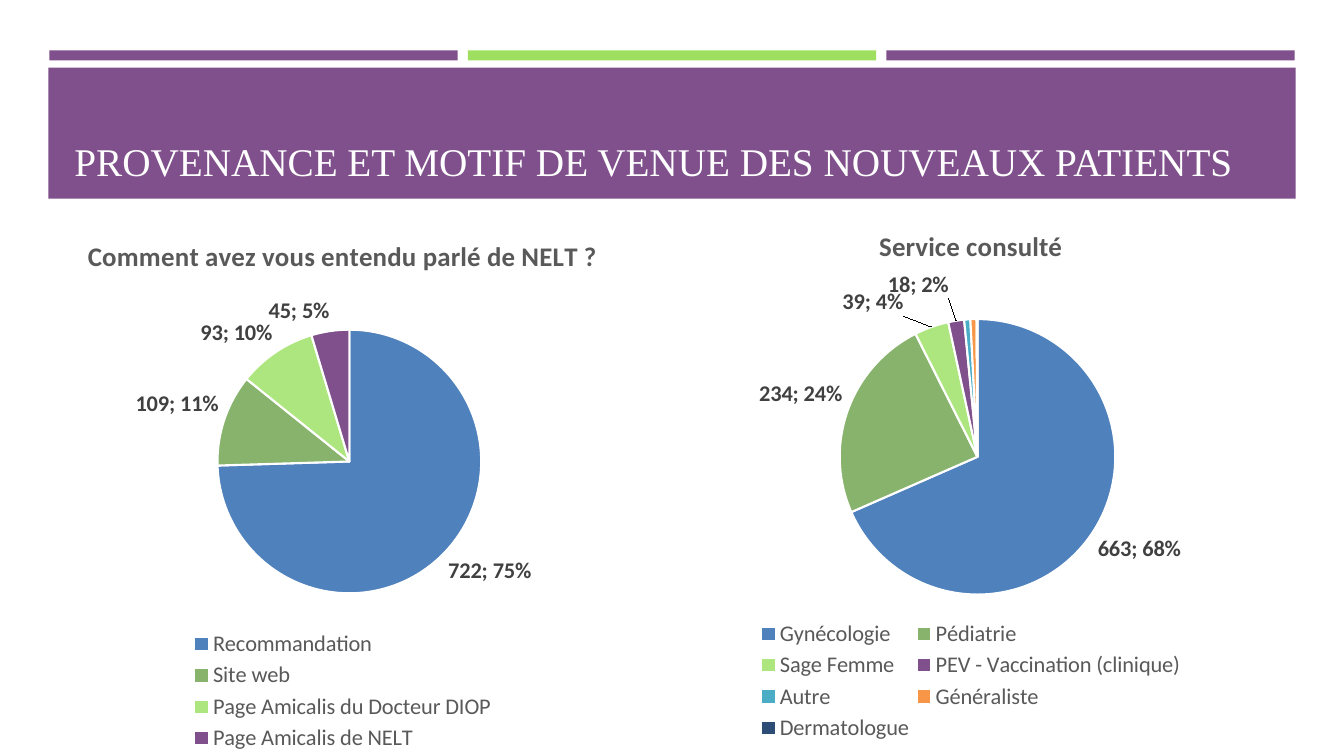
"""Build the slide on where new patients come from and why they visit."""
import pptx
import pptx.chart.data
import pptx.dml.color
import pptx.enum.chart
import pptx.enum.text
import pptx.enum.shapes
import pptx.oxml
import pptx.oxml.ns
import pptx.util
from pptx.util import Inches

PURPLE, GREEN, WHITE = "7F508B", "9FDF5F", "FFFFFF"
SLICE_COLORS = ["4F81BD", "88B36D", "ADE67F", PURPLE, "4BACC6", "F79646", "2C4D75"]
NAMESPACE = pptx.oxml.ns.nsdecls("c")


def color(value):
    return pptx.dml.color.RGBColor.from_string(value)


def add_layout(parent, following_tag, inner, x, y, width=None, height=None):
    target = '<c:layoutTarget val="inner"/>' if inner else ""
    modes = '<c:xMode val="edge"/><c:yMode val="edge"/>' if width else ""
    size = f'<c:w val="{width}"/><c:h val="{height}"/>' if width else ""
    for existing in parent.findall(pptx.oxml.ns.qn("c:layout")):
        parent.remove(existing)
    layout = pptx.oxml.parse_xml(
        f'<c:layout {NAMESPACE}><c:manualLayout>{target}{modes}'
        f'<c:x val="{x}"/><c:y val="{y}"/>{size}</c:manualLayout></c:layout>')
    parent.find(pptx.oxml.ns.qn(following_tag)).addprevious(layout)


presentation = pptx.Presentation()
presentation.slide_width = Inches(13.33)
presentation.slide_height = Inches(7.5)
slide = presentation.slides.add_slide(presentation.slide_layouts[6])

bands = [
    (0.49, 0.5, 4.05, 0.1, PURPLE),
    (4.64, 0.5, 4.05, 0.1, GREEN),
    (8.79, 0.5, 4.05, 0.1, PURPLE),
    (0.48, 0.67, 12.37, 1.3, PURPLE),
]
for left, top, width, height, fill in bands:
    band = slide.shapes.add_shape(
        pptx.enum.shapes.MSO_SHAPE.RECTANGLE,
        Inches(left), Inches(top), Inches(width), Inches(height))
    band.shadow.inherit = False
    band.fill.solid()
    band.fill.fore_color.rgb = color(fill)
    band.line.fill.background()

title_box = slide.shapes.add_textbox(Inches(0.64), Inches(0.77), Inches(12.06), Inches(1.11))
title_frame = title_box.text_frame
title_frame.word_wrap = True
title_frame.vertical_anchor = pptx.enum.text.MSO_ANCHOR.BOTTOM
paragraph = title_frame.paragraphs[0]
paragraph.text = "PROVENANCE ET MOTIF DE VENUE DES NOUVEAUX PATIENTS"
paragraph.font.name = "Times New Roman"
paragraph.font.size = pptx.util.Pt(28)
paragraph.font.color.rgb = color(WHITE)

pies = [
    {
        "title": "Comment avez vous entendu parlé de NELT ?",
        "position": (0.13, 2.14),
        "values": {"Recommandation": 722, "Site web": 109,
                   "Page Amicalis du Docteur DIOP": 93, "Page Amicalis de NELT": 45},
        "plot": (0.31, 0.21, 0.4, 0.49),
        "legend": (0.26, 0.76, 0.48, 0.24),
        "moved": {}, "hidden": [],
    },
    {
        "title": "Service consulté",
        "position": (6.36, 2.04),
        "values": {"Gynécologie": 663, "Pédiatrie": 234, "Sage Femme": 39,
                   "PEV - Vaccination (clinique)": 18, "Autre": 7,
                   "Généraliste": 7, "Dermatologue": 1},
        "plot": (0.3, 0.21, 0.42, 0.51),
        "legend": (0.17, 0.76, 0.66, 0.24),
        "moved": {2: (-0.04, -0.01), 3: (-0.01, -0.03)}, "hidden": [4, 5, 6],
    },
]
for pie in pies:
    left, top = pie["position"]
    chart_data = pptx.chart.data.CategoryChartData()
    chart_data.categories = list(pie["values"])
    chart_data.add_series(pie["title"], list(pie["values"].values()))
    chart = slide.shapes.add_chart(
        pptx.enum.chart.XL_CHART_TYPE.PIE, Inches(left), Inches(top),
        Inches(6.54), Inches(5.36), chart_data).chart
    chart.font.name = "Calibri"
    chart.font.size = pptx.util.Pt(16)

    chart.has_title = True
    heading = chart.chart_title.text_frame.paragraphs[0]
    heading.text = pie["title"]
    heading.font.name = "Calibri"
    heading.font.size = pptx.util.Pt(19.2)
    heading.font.bold = True
    heading.font.color.rgb = color("595959")

    chart.has_legend = True
    legend = chart.legend
    legend.position = pptx.enum.chart.XL_LEGEND_POSITION.BOTTOM
    legend.include_in_layout = False
    legend.font.name = "Calibri"
    legend.font.size = pptx.util.Pt(16)
    legend.font.color.rgb = color("595959")
    add_layout(legend._element, "c:overlay", False, *pie["legend"])

    plot = chart.plots[0]
    plot.vary_by_categories = True
    add_layout(plot._element.getparent(), "c:pieChart", True, *pie["plot"])
    series = plot.series[0]
    for index, fill in enumerate(SLICE_COLORS[:len(pie["values"])]):
        slice_format = series.points[index].format
        slice_format.fill.solid()
        slice_format.fill.fore_color.rgb = color(fill)
        slice_format.line.color.rgb = color(WHITE)
        slice_format.line.width = pptx.util.Pt(1.5)

    labels = series.data_labels
    labels.show_value = True
    labels.show_percentage = True
    labels.position = pptx.enum.chart.XL_LABEL_POSITION.OUTSIDE_END
    labels.font.name = "Calibri"
    labels.font.size = pptx.util.Pt(16)
    labels.font.bold = True
    labels.font.color.rgb = color("404040")
    labels_element = labels._element
    leader_lines = labels_element.find(pptx.oxml.ns.qn("c:showLeaderLines"))
    if leader_lines is None:
        leader_lines = pptx.oxml.parse_xml(f'<c:showLeaderLines {NAMESPACE}/>')
        labels_element.append(leader_lines)
    leader_lines.set("val", "1")
    leader_lines.addprevious(pptx.oxml.parse_xml(f'<c:separator {NAMESPACE}>; </c:separator>'))

    point_labels = []
    for index, offset in pie["moved"].items():
        label = pptx.oxml.parse_xml(
            f'<c:dLbl {NAMESPACE}><c:idx val="{index}"/><c:dLblPos val="bestFit"/>'
            '<c:showLegendKey val="0"/><c:showVal val="1"/><c:showCatName val="0"/>'
            '<c:showSerName val="0"/><c:showPercent val="1"/><c:showBubbleSize val="0"/>'
            '<c:separator>; </c:separator></c:dLbl>')
        add_layout(label, "c:dLblPos", False, *offset)
        point_labels.append(label)
    for index in pie["hidden"]:
        point_labels.append(pptx.oxml.parse_xml(
            f'<c:dLbl {NAMESPACE}><c:idx val="{index}"/><c:delete val="1"/></c:dLbl>'))
    for order, label in enumerate(point_labels):
        labels_element.insert(order, label)

presentation.save("out.pptx")
